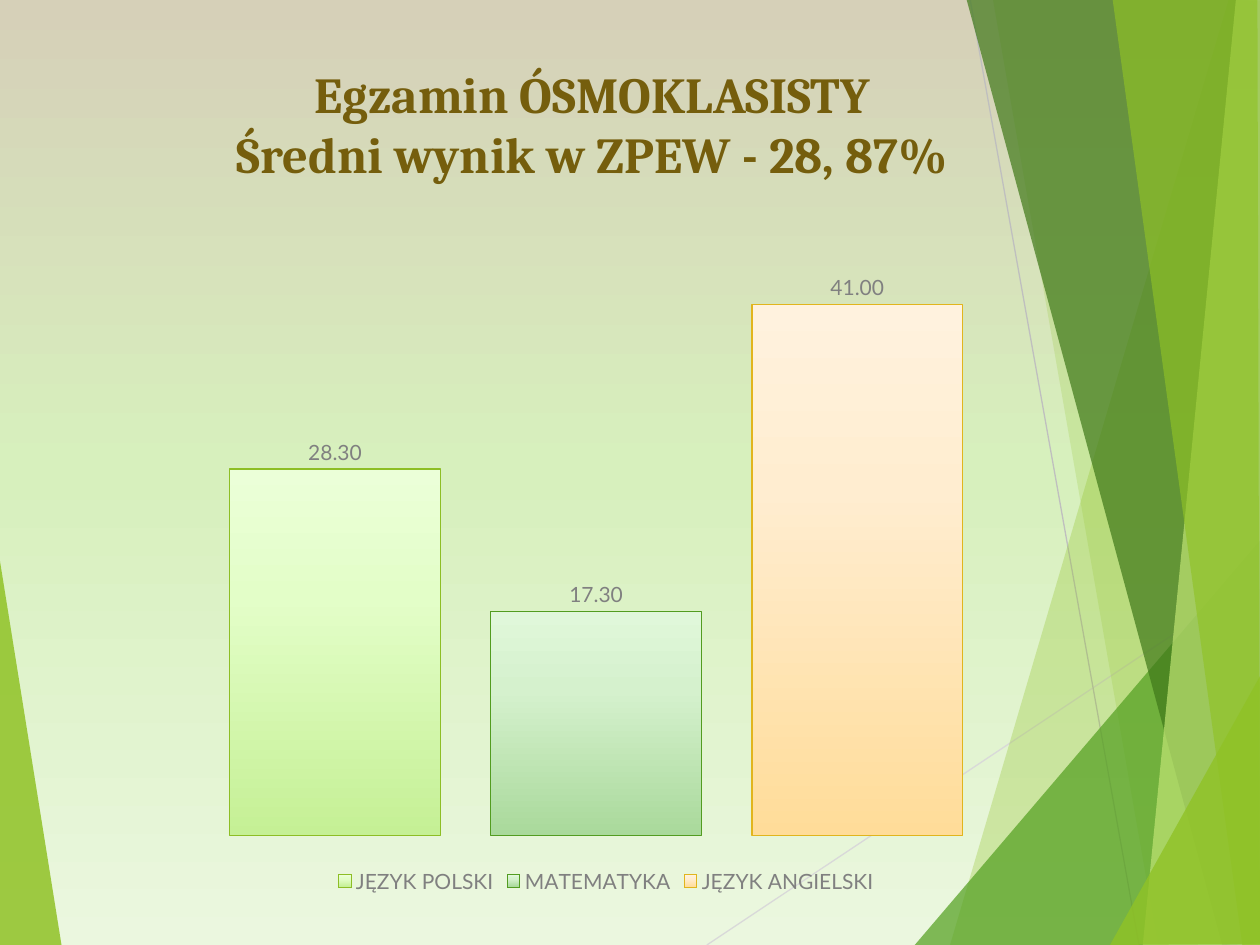
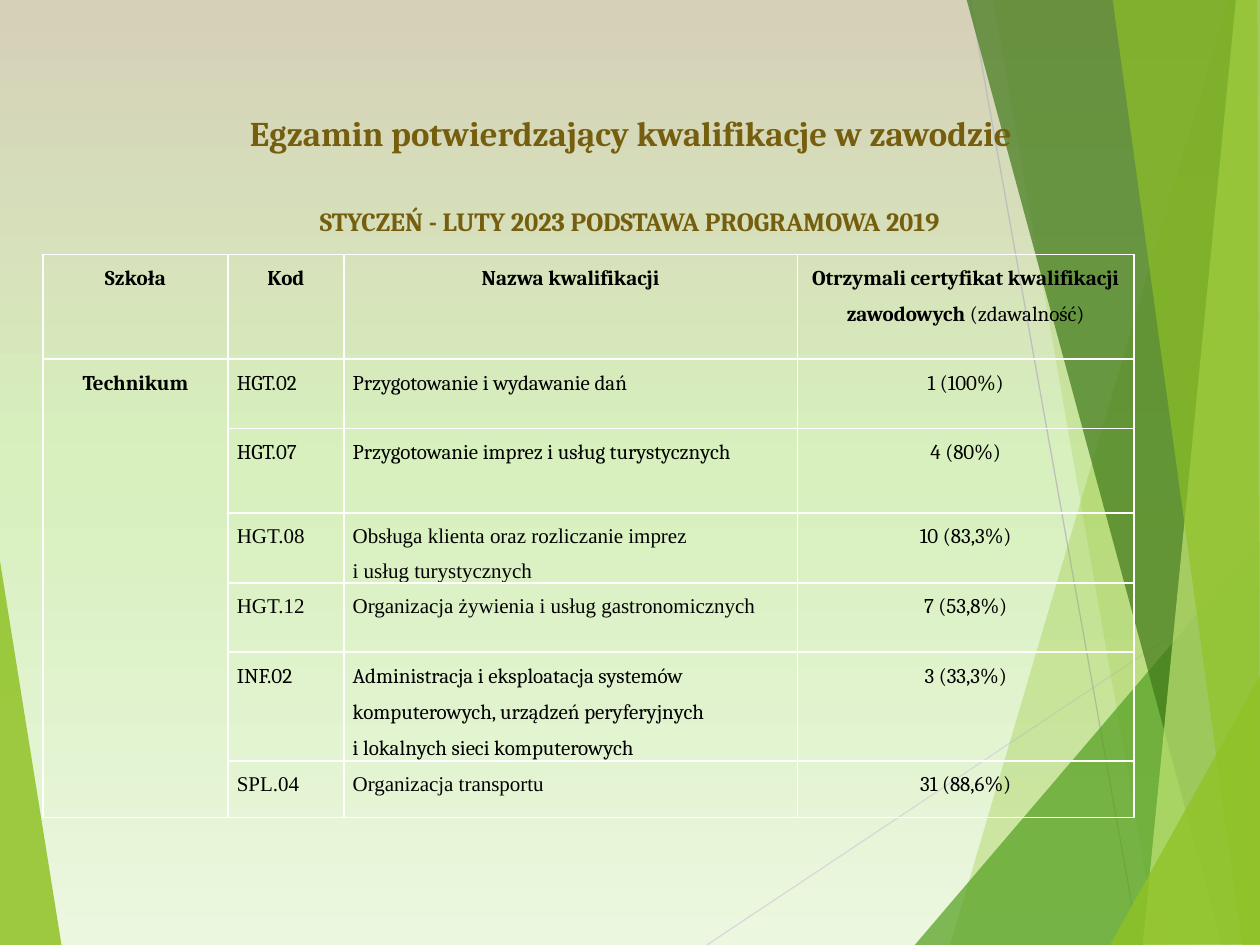
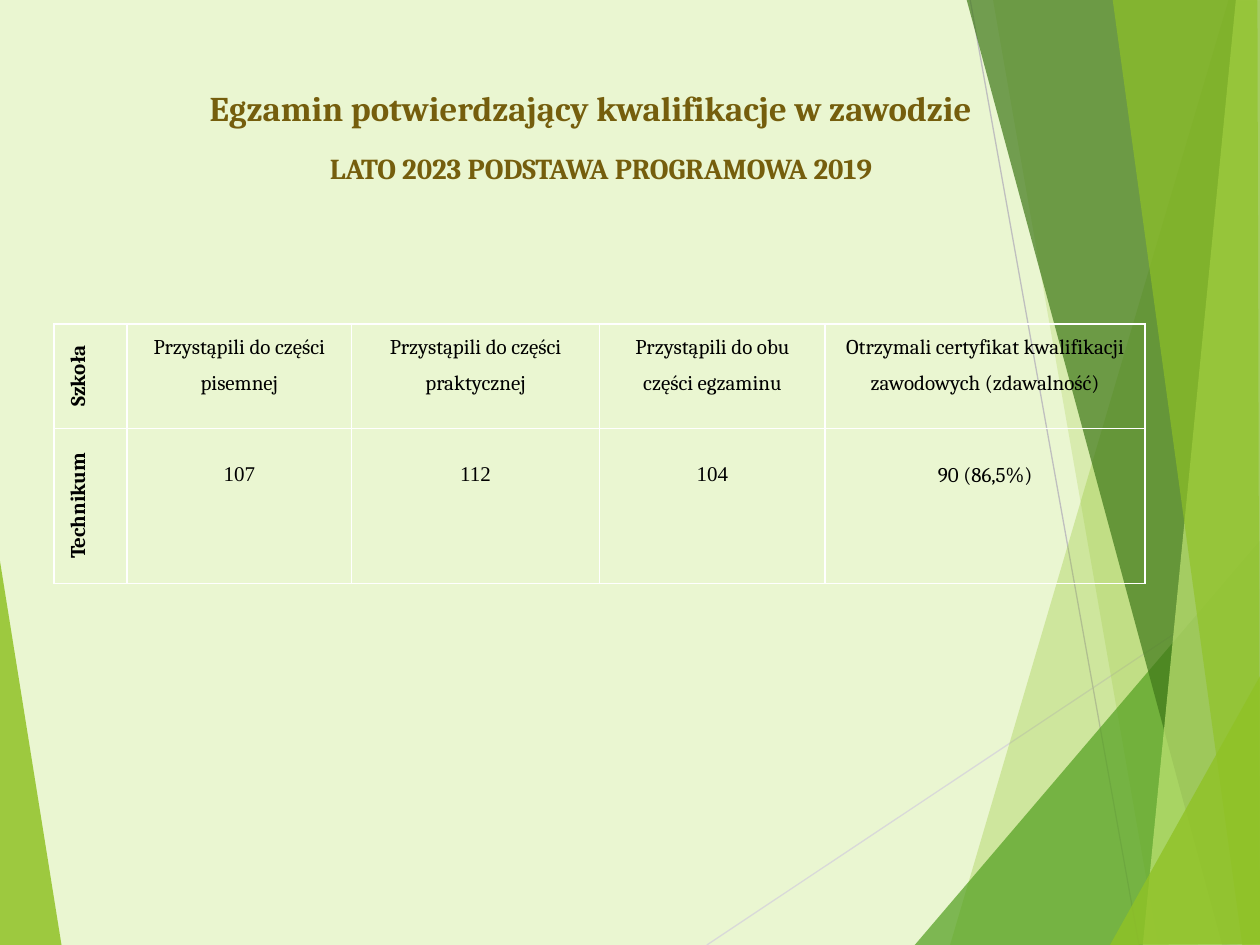
from dataclasses import dataclass

from lxml import etree
from pptx import Presentation
from pptx.chart.data import CategoryChartData
from pptx.dml.color import RGBColor
from pptx.enum.chart import XL_CHART_TYPE, XL_LABEL_POSITION, XL_LEGEND_POSITION
from pptx.enum.shapes import MSO_CONNECTOR
from pptx.enum.text import MSO_ANCHOR, MSO_AUTO_SIZE, PP_ALIGN
from pptx.oxml.ns import qn
from pptx.util import Inches, Pt

LEFT, CENTER = PP_ALIGN.LEFT, PP_ALIGN.CENTER
TITLE_ONLY = 5


@dataclass(frozen=True)
class Theme:
    serif: str = "Cambria"
    times: str = "Times New Roman"
    sans: str = "Lato"
    heading: str = "755E0D"
    text: str = "000000"
    label: str = "808080"
    border: str = "FFFFFF"
    plain_bg: str = "EAF6D1"
    gradient_bg: tuple = ((0, "D6D0B8"), (50, "D7F0BD"), (100, "EBF7DF"))
    big_title: float = 28.8
    title: float = 19.8
    body: float = 12


T = Theme()

# Backdrop: outline points, colour, opacity in percent
LEFT_WEDGE = ([(-0.01, 4.39), (0.49, 7.51), (-0.01, 7.5)], "90C226", 85)
RAYS = [
    ((5.61, 7.5), (10.01, 4.57), "D9D9D9"),
    ((7.7, 0), (9.04, 7.5), "BFBFBF"),
]
FACETS = [
    ([(9.75, 0), (7.54, 7.5), (10.02, 7.51), (10.01, 0.01)], "90C226", 30),
    ([(7.88, -0.01), (9.19, 7.5), (10.01, 7.5), (10.01, -0.01)], "90C226", 20),
    ([(7.26, 7.5), (10, 4.29), (10.01, 7.5)], "54A021", 72),
    ([(7.67, -0.01), (9.7, 7.5), (10.01, 7.49), (10.01, -0.01)], "3F7819", 70),
    ([(9.81, -0.01), (9.07, 7.5), (10.01, 7.5), (10, -0.01)], "C0E474", 70),
    ([(8.83, -0.01), (9.86, 7.5), (10, 7.5), (9.98, -0.01)], "90C226", 65),
    ([(8.81, 7.5), (10.01, 5.35), (10.01, 7.49)], "90C226", 80),
]

AVERAGE_TITLE = ["Egzamin ÓSMOKLASISTY", "Średni wynik w ZPEW - 28, 87%"]
VOCATIONAL_TITLE = ["Egzamin potwierdzający kwalifikacje w zawodzie"]
WINTER = "STYCZEŃ - LUTY 2023 PODSTAWA PROGRAMOWA 2019"
SUMMER = "LATO 2023 PODSTAWA PROGRAMOWA 2019"

# Subject, mean score, line colour, gradient from bottom to top
SUBJECTS = [
    ("JĘZYK POLSKI", 28.3, "8DBE25", ((0, "C5F095"), (65, "E3FEC8"), (100, "EBFFD8"))),
    ("MATEMATYKA", 17.3, "529C20", ((0, "A9D99B"), (65, "D5F1CD"), (100, "E0F7DA"))),
    ("JĘZYK ANGIELSKI", 41, "E1B51D", ((0, "FFDC99"), (65, "FFEDD0"), (100, "FFF2DE"))),
]

WINTER_HEADERS = ["Szkoła", "Kod", "Nazwa kwalifikacji"]
CERTIFICATE = ("Otrzymali certyfikat kwalifikacji zawodowych ", "(zdawalność)")
# Code, lines of the name, result, font of code and name
QUALIFICATIONS = [
    ("HGT.02", ["Przygotowanie i wydawanie dań"], "1 (100%)", T.serif),
    ("HGT.07", ["Przygotowanie imprez i usług turystycznych"], "4 (80%)", T.serif),
    ("HGT.08", ["Obsługa klienta oraz rozliczanie imprez", "i usług turystycznych"],
     "10 (83,3%)", T.times),
    ("HGT.12", ["Organizacja żywienia i usług gastronomicznych"], "7 (53,8%)", T.times),
    ("INF.02", ["Administracja i eksploatacja systemów komputerowych, urządzeń peryferyjnych",
                "i lokalnych sieci komputerowych"], "3 (33,3%)", T.serif),
    ("SPL.04", ["Organizacja transportu"], "31 (88,6%)", T.times),
]
# Header, value, font of value
SUMMER_RESULTS = [
    ("Przystąpili do części pisemnej", "107", T.times),
    ("Przystąpili do części praktycznej", "112", T.times),
    ("Przystąpili do obu części egzaminu", "104", T.times),
    ("".join(CERTIFICATE), "90 (86,5%)", T.serif),
]


def rgb(value):
    return RGBColor.from_string(value)


def style(font, size, color, name, bold=False):
    font.size, font.name, font.bold = Pt(size), name, bold
    font.color.rgb = rgb(color)


def add_run(p, text, size=T.body, color=T.text, font=T.serif, bold=False):
    r = p.add_run()
    r.text = text
    style(r.font, size, color, font, bold)


def set_stops(root, stops, angle):
    """Replace the stops and angle of the first gradient fill under root."""
    grad = root.find(".//" + qn("a:gradFill"))
    gs_list = grad.find(qn("a:gsLst"))
    for gs in list(gs_list):
        gs_list.remove(gs)
    for position, color in stops:
        gs = etree.SubElement(gs_list, qn("a:gs"), pos=str(position * 1000))
        etree.SubElement(gs, qn("a:srgbClr"), val=color)
    grad.find(qn("a:lin")).set("ang", str(angle * 60000))


def set_background(slide, gradient):
    fill = slide.background.fill
    if gradient:
        fill.gradient()
        set_stops(slide.element, T.gradient_bg, 90)
    else:
        fill.solid()
        fill.fore_color.rgb = rgb(T.plain_bg)


def add_facet(shapes, points, color, opacity):
    start, *rest = [(Inches(x), Inches(y)) for x, y in points]
    builder = shapes.build_freeform(*start)
    builder.add_line_segments(rest, close=True)
    sp = builder.convert_to_shape()
    sp.shadow.inherit = False
    sp.line.fill.background()
    sp.fill.solid()
    sp.fill.fore_color.rgb = rgb(color)
    clr = sp.element.spPr.find(".//" + qn("a:srgbClr"))
    etree.SubElement(clr, qn("a:alpha"), val=str(opacity * 1000))
    return sp


def add_ray(shapes, start, end, color):
    ends = [Inches(v) for v in (*start, *end)]
    ray = shapes.add_connector(MSO_CONNECTOR.STRAIGHT, *ends)
    ray.line.color.rgb = rgb(color)
    ray.line.width = Pt(0.75)
    etree.SubElement(ray.element.spPr, qn("a:effectLst"))
    return ray


def move_backdrop_to_layout(slide):
    """Draw the shared backdrop and hand it over to the slide's layout."""
    shapes = slide.shapes
    parts = [add_facet(shapes, *LEFT_WEDGE)]
    parts += [add_ray(shapes, *ray) for ray in RAYS]
    parts += [add_facet(shapes, *facet) for facet in FACETS]
    for part in parts:
        slide.slide_layout.shapes.element.append(part.element)


def set_title(slide, lines, box, size):
    title = slide.shapes.title
    title.left, title.top, title.width, title.height = [Inches(v) for v in box]
    tf = title.text_frame
    tf.auto_size, tf.word_wrap = MSO_AUTO_SIZE.NONE, True
    tf.vertical_anchor = MSO_ANCHOR.TOP
    p = tf.paragraphs[0]
    p.alignment = CENTER
    for i, line in enumerate(lines):
        if i:
            p.add_line_break()
        add_run(p, line, size, T.heading, bold=True)


def add_session(slide, text, left, top, size):
    """Add the line that names the exam session."""
    box = slide.shapes.add_textbox(Inches(left), Inches(top), Inches(5.2), Inches(0.55))
    tf = box.text_frame
    tf.word_wrap = True
    tf.margin_top = Inches(0.08)
    p = tf.paragraphs[0]
    p.alignment, p.line_spacing = CENTER, 0.7
    add_run(p, text, size, T.heading, bold=True)


def add_grid(slide, left, top, widths, heights):
    """Add an unfilled table with white borders."""
    frame = slide.shapes.add_table(len(heights), len(widths), Inches(left), Inches(top),
                                   Inches(sum(widths)), Inches(sum(heights)))
    table = frame.table
    table.first_row = table.horz_banding = False
    for column, width in zip(table.columns, widths):
        column.width = Inches(width)
    for row, height in zip(table.rows, heights):
        row.height = Inches(height)
    for cell in table.iter_cells():
        cell.margin_left = cell.margin_right = Inches(0.07)
        cell.margin_top = cell.margin_bottom = 0
        tc_pr = cell._tc.get_or_add_tcPr()
        for side in ("lnL", "lnR", "lnT", "lnB"):
            ln = etree.SubElement(tc_pr, qn("a:" + side), w=str(Pt(1)))
            solid = etree.SubElement(ln, qn("a:solidFill"))
            etree.SubElement(solid, qn("a:srgbClr"), val=T.border)
        cell.fill.background()
    return table


def write_cell(cell, lines, align=CENTER, **look):
    tf = cell.text_frame
    for i, line in enumerate(lines):
        p = tf.add_paragraph() if i else tf.paragraphs[0]
        p.alignment, p.line_spacing = align, 1.5
        add_run(p, line, **look)


def add_score_chart(slide):
    data = CategoryChartData(number_format="0.00")
    data.categories = ["1"]
    for name, score, _, _ in SUBJECTS:
        data.add_series(name, [score])
    chart = slide.shapes.add_chart(XL_CHART_TYPE.COLUMN_CLUSTERED, Inches(0.91), Inches(1.62),
                                   Inches(7.8), Inches(5.51), data).chart
    style(chart.font, 10, T.text, T.sans)
    chart.has_title = False
    chart.has_legend = True
    chart.legend.position = XL_LEGEND_POSITION.BOTTOM
    chart.legend.include_in_layout = False
    style(chart.legend.font, T.body, T.label, T.sans)

    axis = chart.value_axis
    axis.minimum_scale, axis.maximum_scale = 0, 45
    axis.has_major_gridlines = False
    axis.visible = chart.category_axis.visible = False

    plot = chart.plots[0]
    plot.gap_width, plot.overlap, plot.vary_by_categories = 100, -24, False
    ser_elements = chart.element.findall(".//" + qn("c:ser"))
    for series, ser, (_, _, line, stops) in zip(plot.series, ser_elements, SUBJECTS):
        series.format.fill.gradient()
        set_stops(ser, stops, 270)
        series.format.line.color.rgb = rgb(line)
        series.format.line.width = Pt(0.75)
        labels = series.data_labels
        labels.show_value = True
        labels.position = XL_LABEL_POSITION.OUTSIDE_END
        labels.number_format, labels.number_format_is_linked = "0.00", False
        style(labels.font, T.body, T.label, T.sans)

    plot_area = chart.element.find(".//" + qn("c:plotArea"))
    layout = plot_area.find(qn("c:layout"))
    if layout is None:
        layout = etree.Element(qn("c:layout"))
        plot_area.insert(0, layout)
    manual = etree.SubElement(layout, qn("c:manualLayout"))
    for tag, value in (("layoutTarget", "inner"), ("xMode", "edge"), ("yMode", "edge"),
                       ("x", "0.01"), ("y", "0.07"), ("w", "0.96"), ("h", "0.84")):
        etree.SubElement(manual, qn("c:" + tag), val=value)


def fill_winter_table(slide):
    table = add_grid(slide, 0.34, 2.02, [1.47, 0.92, 3.6, 2.67],
                     [0.83, 0.55, 0.67, 0.55, 0.55, 0.83, 0.45])
    for col, header in enumerate(WINTER_HEADERS):
        write_cell(table.cell(0, col), [header], bold=True)
    certificate = table.cell(0, 3)
    write_cell(certificate, [CERTIFICATE[0]], bold=True)
    add_run(certificate.text_frame.paragraphs[0], CERTIFICATE[1])
    table.cell(1, 0).merge(table.cell(len(QUALIFICATIONS), 0))
    write_cell(table.cell(1, 0), ["Technikum"], bold=True)
    for row, (code, name, result, font) in enumerate(QUALIFICATIONS, 1):
        write_cell(table.cell(row, 1), [code], LEFT, font=font)
        write_cell(table.cell(row, 2), name, LEFT, font=font)
        write_cell(table.cell(row, 3), [result])


def fill_summer_table(slide):
    table = add_grid(slide, 0.43, 2.57, [0.58, 1.78, 1.97, 1.79, 2.54], [0.83, 1.23])
    for row, label in enumerate(["Szkoła", "Technikum"]):
        cell = table.cell(row, 0)
        write_cell(cell, [label], bold=True)
        cell._tc.get_or_add_tcPr().set("vert", "vert270")
    for col, (header, value, font) in enumerate(SUMMER_RESULTS, 1):
        write_cell(table.cell(0, col), [header])
        write_cell(table.cell(1, col), [value], font=font)
        table.cell(1, col).margin_top = Inches(0.18)


def main():
    prs = Presentation()
    prs.slide_width, prs.slide_height = Inches(10), Inches(7.5)
    layout = prs.slide_layouts[TITLE_ONLY]
    average, winter, summer = [prs.slides.add_slide(layout) for _ in range(3)]
    move_backdrop_to_layout(average)

    set_background(average, gradient=True)
    set_title(average, AVERAGE_TITLE, (0.2, 0.45, 9, 1.18), T.big_title)
    add_score_chart(average)

    set_background(winter, gradient=True)
    set_title(winter, VOCATIONAL_TITLE, (0.36, 0.84, 9.29, 0.55), T.title)
    fill_winter_table(winter)
    add_session(winter, WINTER, 2.4, 1.62, 15)

    set_background(summer, gradient=False)
    set_title(summer, VOCATIONAL_TITLE, (0.04, 0.64, 9.29, 0.55), T.title)
    add_session(summer, SUMMER, 2.17, 1.19, 16.5)
    fill_summer_table(summer)

    prs.save("out.pptx")


if __name__ == "__main__":
    main()
